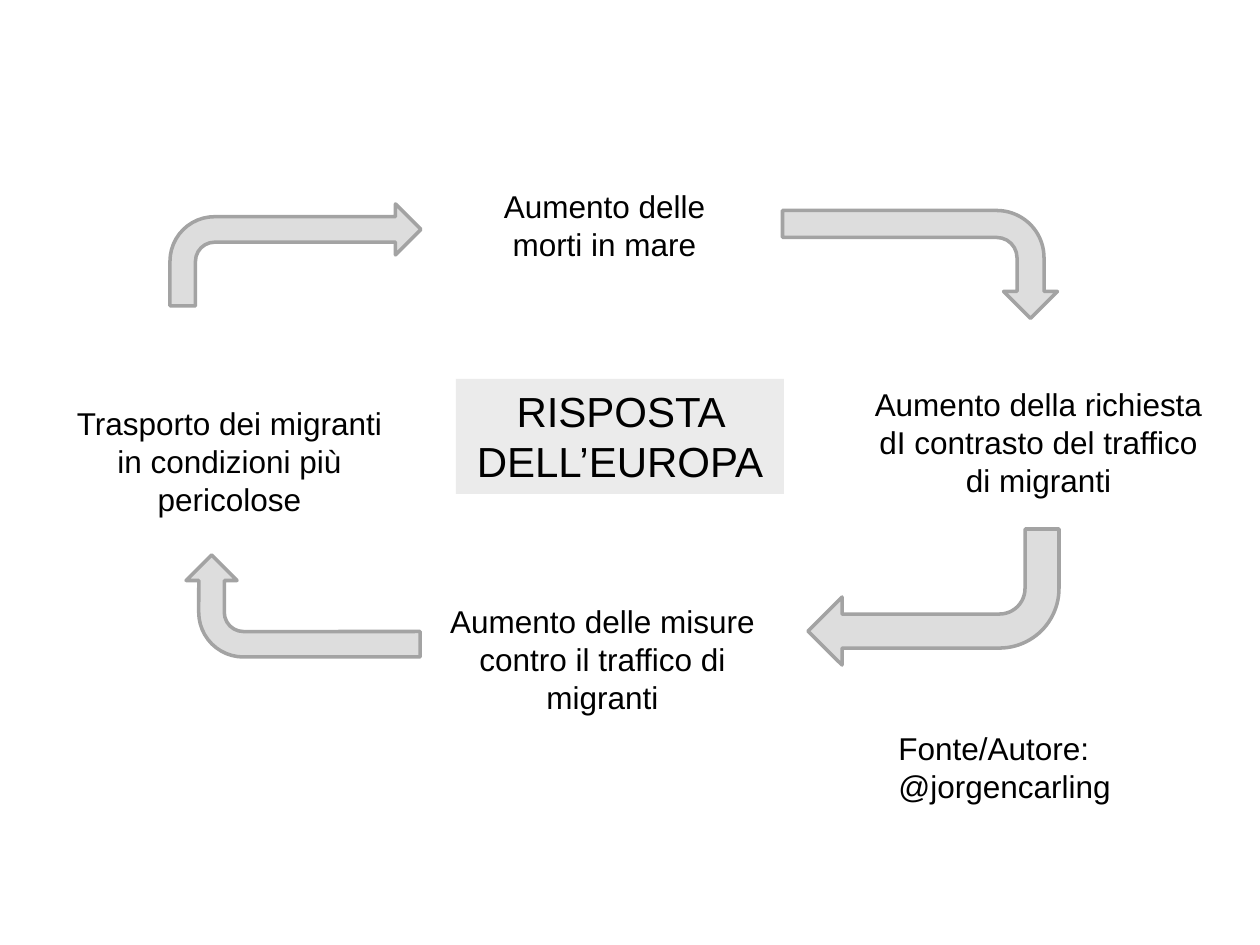
from pptx import Presentation
from pptx import util as u
from pptx.dml.color import RGBColor
from pptx.enum import shapes, text

PX = u.Inches(1) / 126
COLOURS = {"text": "000000", "panel": "EBEBEB", "arrow": "DDDDDD", "outline": "A3A3A3"}

# Boxes are left, top, width, height in px.
STAGES = [
    ("Aumento delle morti in mare", (480, 181, 249, 89)),
    ("Aumento della richiesta dI contrasto del traffico di migranti", (857, 379, 363, 127)),
    ("Aumento delle misure contro il traffico di migranti", (421, 596, 363, 127)),
    ("Trasporto dei migranti in condizioni più pericolose", (48, 398, 363, 127)),
]
CENTRE = ("RISPOSTA DELL’EUROPA", (456, 379, 328, 115))
CREDIT = ("Fonte/Autore: @jorgencarling", (886, 723, 305, 89))
# Box before rotation, then rotation in degrees.
ARROWS = [
    ((866, 127, 108, 275), 90),
    ((808, 529, 251, 136), 180),
    ((252, 489, 102, 234), 270),
    ((170, 204, 251, 102), 0),
]


def emu(box):
    return [round(value * PX) for value in box]


def colour(name):
    return RGBColor.from_string(COLOURS[name])


def add_preset(slide, kind, box, fill):
    shape = slide.shapes.add_shape(kind, *emu(box))
    shape.shadow.inherit = False
    shape.fill.solid()
    shape.fill.fore_color.rgb = colour(fill)
    return shape


def write(shape, words, size=18, alignment=text.PP_ALIGN.CENTER):
    frame = shape.text_frame
    frame_format = {
        "word_wrap": True,
        "auto_size": text.MSO_AUTO_SIZE.SHAPE_TO_FIT_TEXT,
        "vertical_anchor": text.MSO_ANCHOR.TOP,
    }
    for name, value in frame_format.items():
        setattr(frame, name, value)
    paragraph = frame.paragraphs[0]
    paragraph.text = words
    paragraph.alignment = alignment
    font = paragraph.runs[0].font
    for name, value in {"name": "Arial", "size": u.Pt(size)}.items():
        setattr(font, name, value)
    font.color.rgb = colour("text")


def main():
    presentation = Presentation()
    presentation.slide_width = u.Inches(10)
    presentation.slide_height = u.Inches(7.5)
    slide = presentation.slides.add_slide(presentation.slide_layouts[6])

    for words, box in STAGES:
        write(slide.shapes.add_textbox(*emu(box)), words)

    for box, rotation in ARROWS:
        arrow = add_preset(slide, shapes.MSO_SHAPE.BENT_ARROW, box, "arrow")
        arrow.rotation = rotation
        arrow.line.color.rgb = colour("outline")
        arrow.line.width = u.Pt(2)

    words, box = CENTRE
    panel = add_preset(slide, shapes.MSO_SHAPE.RECTANGLE, box, "panel")
    panel.line.fill.background()
    write(panel, words, size=24)

    words, box = CREDIT
    write(slide.shapes.add_textbox(*emu(box)), words, alignment=text.PP_ALIGN.LEFT)

    presentation.save("out.pptx")


if __name__ == "__main__":
    main()
